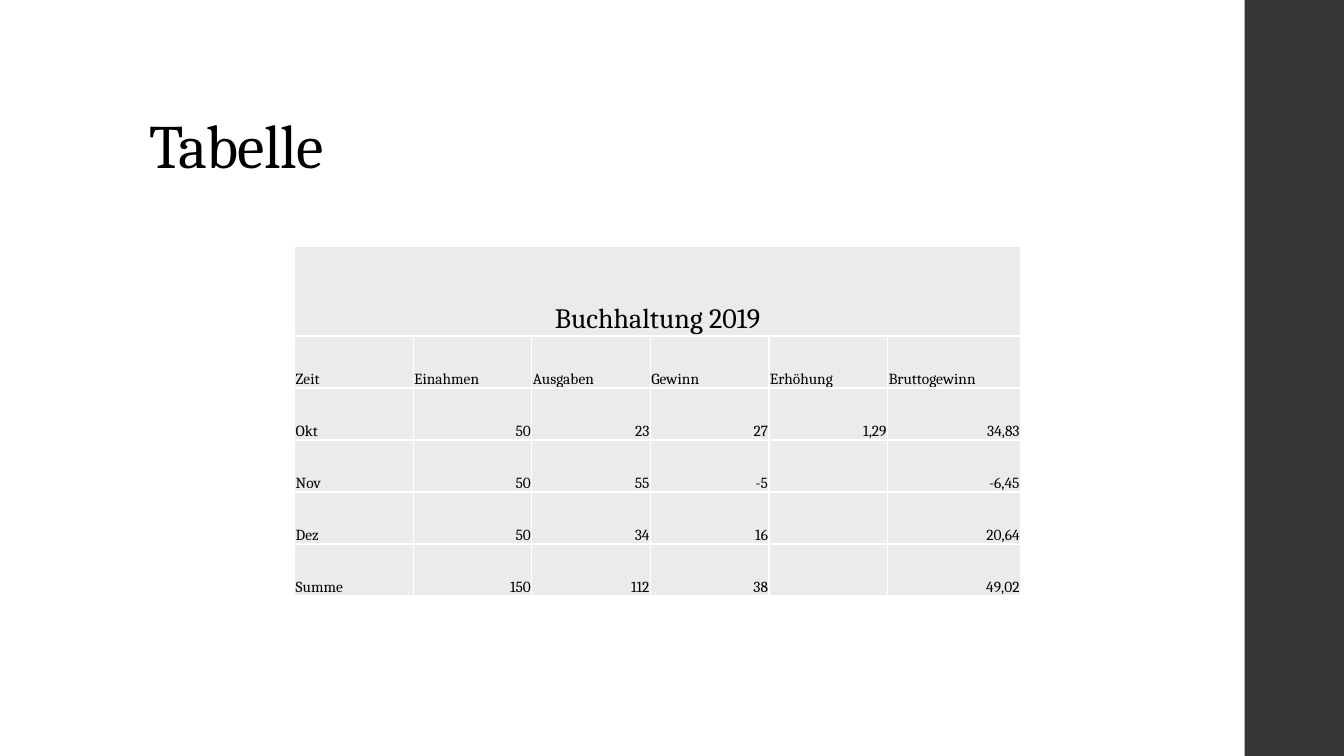
from dataclasses import dataclass

from lxml.etree import SubElement
from pptx import Presentation
from pptx.dml.color import RGBColor
from pptx.enum.shapes import MSO_SHAPE as Shape
from pptx.enum.text import MSO_ANCHOR as Anchor, MSO_AUTO_SIZE as AutoSize, PP_ALIGN as Align
from pptx.oxml.ns import qn
from pptx.slide import Slide
from pptx.table import _Cell as Cell
from pptx.text.text import _Paragraph as Paragraph
from pptx.util import Pt

COLORS = {"text": "000000", "bar": "353537", "cell": "EBEBEB", "border": "FFFFFF"}
FONT = "Cambria"
SLIDE_WIDTH, SLIDE_HEIGHT = 960, 540
BAR_LEFT = 889
COLUMN_WIDTHS = [84.7] * 5 + [95]
ROW_HEIGHTS = [64] + [37.15] * 5


@dataclass
class Entry:
    label: str
    values: list[str]


HEADER = Entry("Zeit", ["Einahmen", "Ausgaben", "Gewinn", "Erhöhung", "Bruttogewinn"])
ENTRIES = [
    Entry("Okt", ["50", "23", "27", "1,29", "34,83"]),
    Entry("Nov", ["50", "55", "-5", "", "-6,45"]),
    Entry("Dez", ["50", "34", "16", "", "20,64"]),
    Entry("Summe", ["150", "112", "38", "", "49,02"]),
]


def color(name: str) -> RGBColor:
    return RGBColor.from_string(COLORS[name])


def format_paragraph(paragraph: Paragraph, size: float, align: Align) -> None:
    paragraph.alignment = align
    for run in paragraph.runs:
        run.font.name = FONT
        run.font.size = Pt(size)
        run.font.color.rgb = color("text")


def add_side_bar(slide: Slide) -> None:
    bar = slide.shapes.add_shape(
        Shape.RECTANGLE, Pt(BAR_LEFT), 0, Pt(SLIDE_WIDTH - BAR_LEFT), Pt(SLIDE_HEIGHT)
    )
    bar.shadow.inherit = False
    bar.fill.solid()
    bar.fill.fore_color.rgb = color("bar")
    bar.line.fill.background()


def set_title(slide: Slide, text: str) -> None:
    title = slide.shapes.title
    title.left, title.top, title.width, title.height = Pt(99.4), Pt(28.8), Pt(763), Pt(104.4)
    frame = title.text_frame
    frame.text = text
    frame.auto_size = AutoSize.NONE
    frame.vertical_anchor = Anchor.BOTTOM
    paragraph = frame.paragraphs[0]
    paragraph.line_spacing = 0.9
    format_paragraph(paragraph, 44, Align.LEFT)
    for run in paragraph.runs:
        run.font._element.set("spc", "-50")


def add_borders(cell: Cell) -> None:
    properties = cell._tc.get_or_add_tcPr()
    for side in ("lnL", "lnR", "lnT", "lnB"):
        line = SubElement(properties, qn(f"a:{side}"), w=str(Pt(1)))
        fill = SubElement(line, qn("a:solidFill"))
        SubElement(fill, qn("a:srgbClr"), val=COLORS["border"])


def style_cell(cell: Cell) -> None:
    add_borders(cell)
    cell.fill.solid()
    cell.fill.fore_color.rgb = color("cell")
    cell.vertical_anchor = Anchor.BOTTOM
    cell.margin_left = cell.margin_right = cell.margin_top = Pt(0.7)
    cell.margin_bottom = 0


def write_cell(cell: Cell, text: str, size: float, align: Align) -> None:
    cell.text_frame.text = text
    format_paragraph(cell.text_frame.paragraphs[0], size, align)


def add_accounts_table(slide: Slide) -> None:
    table = slide.shapes.add_table(
        len(ROW_HEIGHTS), len(COLUMN_WIDTHS),
        Pt(210.5), Pt(176), Pt(sum(COLUMN_WIDTHS)), Pt(sum(ROW_HEIGHTS)),
    ).table
    for column, width in zip(table.columns, COLUMN_WIDTHS):
        column.width = Pt(width)
    for row, height in zip(table.rows, ROW_HEIGHTS):
        row.height = Pt(height)
    for cell in table.iter_cells():
        style_cell(cell)

    heading = table.cell(0, 0)
    heading.merge(table.cell(0, len(COLUMN_WIDTHS) - 1))
    write_cell(heading, "Buchhaltung 2019", 20, Align.CENTER)
    for row_index, entry in enumerate([HEADER, *ENTRIES], start=1):
        write_cell(table.cell(row_index, 0), entry.label, 11, Align.LEFT)
        align = Align.LEFT if entry is HEADER else Align.RIGHT
        for column_index, value in enumerate(entry.values, start=1):
            write_cell(table.cell(row_index, column_index), value, 11, align)


def main() -> None:
    presentation = Presentation()
    presentation.slide_width = Pt(SLIDE_WIDTH)
    presentation.slide_height = Pt(SLIDE_HEIGHT)
    title_only_layout = presentation.slide_layouts[5]
    slide = presentation.slides.add_slide(title_only_layout)
    add_side_bar(slide)
    set_title(slide, "Tabelle")
    add_accounts_table(slide)
    presentation.save("out.pptx")


if __name__ == "__main__":
    main()
